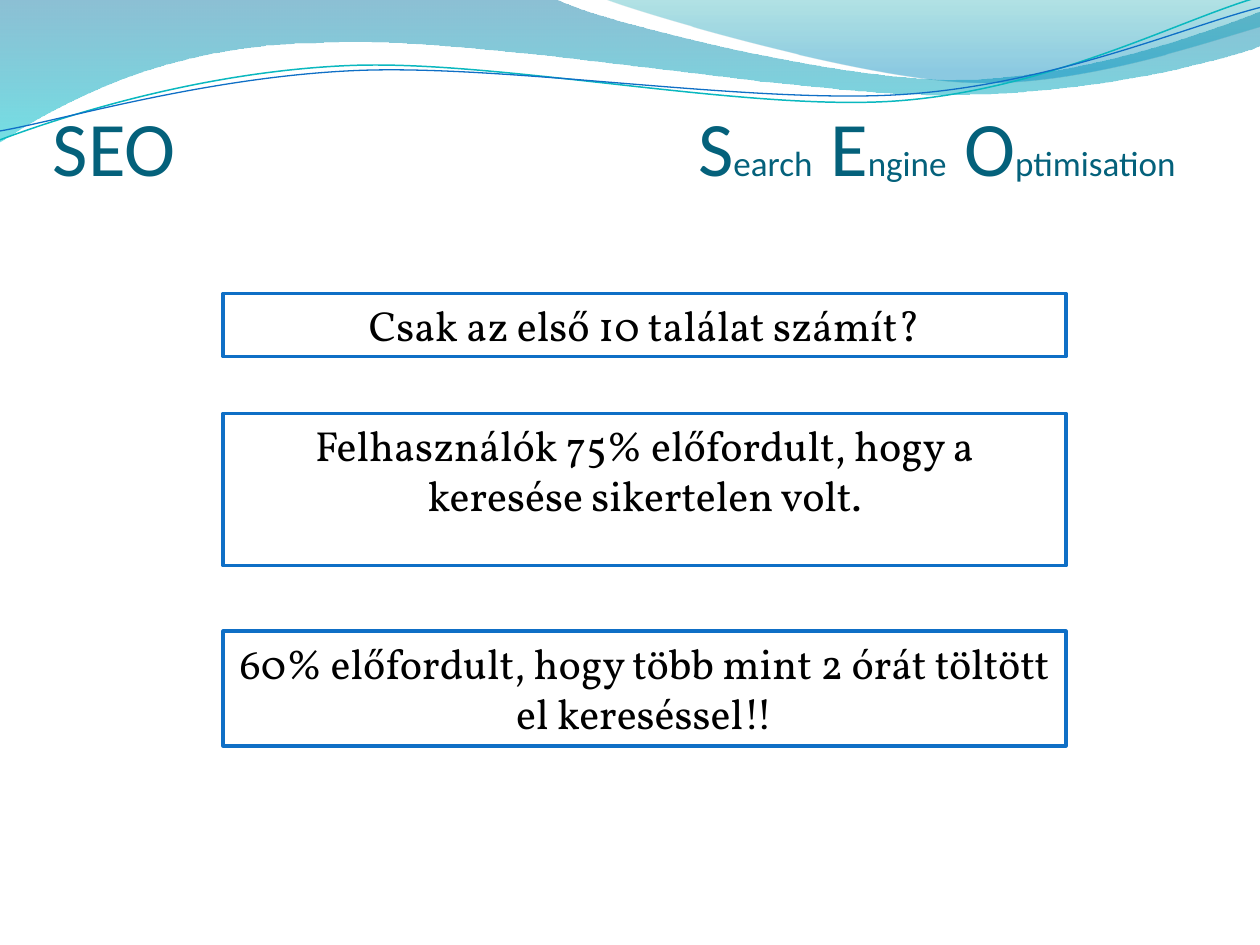
import math

from lxml import etree
from pptx import Presentation
from pptx import util as u
from pptx.dml.color import RGBColor
from pptx.enum import shapes, text
from pptx.oxml.ns import qn

COLORS = {"title": "04617B", "blue": "0F6FC6", "teal": "0AB8BF",
          "white": "FFFFFF", "black": "000000"}

# Content: title spans (text, size) and boxes (text, top, height), back to front
TITLE = [("SEO\tS", 44), ("earch", 20), (" E", 44), ("ngine", 20),
         (" O", 44), ("ptimisation", 20)]
BOXES = [
    ("Csak az első 10 találat számít?", 2.33, 0.5),
    ("60% előfordult, hogy több mint 2 órát töltött el kereséssel!!", 5.01, 0.91),
    ("Felhasználók 75% előfordult, hogy a keresése sikertelen volt.", 3.28, 1.21),
]
BOX_LEFT, BOX_WIDTH = 1.77, 6.69
TAB_STOP = 5.12

# Outlines: a segment of one point is a line, of three points a Bezier curve
# Gradient stops: position, colour, opacity in percent
WAVES = [
    ([[(0, -0.01)], [(4.4, -0.01)],
      [(4.76, 0.17), (6.64, 0.63), (7.58, 0.63)],
      [(8.53, 0.63), (9.58, 0.26), (10, 0.09)], [(10.01, 0.36)],
      [(9.83, 0.44), (8.7, 0.76), (7.46, 0.75)],
      [(6.22, 0.75), (3.82, 0.28), (2.57, 0.34)],
      [(1.29, 0.35), (0.46, 0.83), (-0.01, 1.13)], [(0, -0.01)]],
     [(0, "0074A1", 45), (1, "00C6CF", 55)]),
    ([[(4.79, -0.01)],
      [(5.09, 0.11), (6.82, 0.62), (7.69, 0.65)],
      [(8.56, 0.69), (9.61, 0.32), (10, 0.21)], [(10, 0)], [(4.79, -0.01)]],
     [(0, "00A1A9", 30), (0.8, "008BBF", 45)]),
]
# Strands: outline as it lies on the slide, centre of its frame, colour, width
STRANDS = [
    ([[(0, 1.11)],
      [(0.48, 0.93), (1.58, 0.57), (2.77, 0.52)],
      [(3.95, 0.47), (5.93, 0.89), (7.13, 0.8)],
      [(8.33, 0.71), (9.38, 0.15), (9.98, -0.02)]], (4.99, 0.58), "teal", 0.85),
    ([[(0, 1.04)],
      [(0.47, 0.96), (1.64, 0.61), (2.83, 0.56)],
      [(4.03, 0.51), (5.97, 0.83), (7.17, 0.75)],
      [(8.36, 0.67), (9.41, 0.21), (10, 0.06)]], (5, 0.59), "blue", 0.75),
]
STRAND_TILT = 357.3


def rgb(name):
    return RGBColor.from_string(COLORS[name])


def turn(point, centre, degrees):
    angle = math.radians(degrees)
    x, y = point[0] - centre[0], point[1] - centre[1]
    return (centre[0] + x * math.cos(angle) - y * math.sin(angle),
            centre[1] + x * math.sin(angle) + y * math.cos(angle))


def add_outline(slide, segments, close):
    points = [(u.Inches(x), u.Inches(y)) for part in segments for x, y in part]
    builder = slide.shapes.build_freeform(*points[0])
    builder.add_line_segments(points[1:], close=close)
    shape = builder.convert_to_shape()
    shape.shadow.inherit = False
    # Join the three points of each curve into one Bezier command
    lines = iter(list(shape.element.spPr.iter(qn("a:lnTo"))))
    for part in segments[1:]:
        commands = [next(lines) for _ in part]
        if len(part) == 3:
            curve = etree.Element(qn("a:cubicBezTo"))
            commands[0].addprevious(curve)
            for command in commands:
                curve.append(command[0])
                command.getparent().remove(command)
    return shape


def add_wave(slide, segments, stops):
    wave = add_outline(slide, segments, True)
    wave.line.fill.background()
    wave.fill.gradient()
    wave.fill.gradient_angle = 270
    for stop, (position, color, _) in zip(wave.fill.gradient_stops, stops):
        stop.position = position
        stop.color.rgb = RGBColor.from_string(color)
    tags = list(wave.element.spPr.iter(qn("a:srgbClr")))
    for tag, (_, _, opacity) in zip(tags, stops):
        etree.SubElement(tag, qn("a:alpha"), val=str(opacity * 1000))


def add_strand(slide, segments, centre, color, width):
    level = [[turn(point, centre, -STRAND_TILT) for point in part]
             for part in segments]
    strand = add_outline(slide, level, False)
    strand.rotation = STRAND_TILT
    strand.fill.background()
    strand.line.color.rgb = rgb(color)
    strand.line.width = u.Pt(width)


def fill_title(title):
    title.left, title.top = u.Inches(0.42), u.Inches(0.25)
    title.width, title.height = u.Inches(9.17), u.Inches(1.27)
    frame = title.text_frame
    frame.auto_size = text.MSO_AUTO_SIZE.NONE
    frame.vertical_anchor = text.MSO_ANCHOR.BOTTOM
    frame.margin_left = frame.margin_right = frame.margin_bottom = 0
    frame.margin_top = u.Inches(0.05)
    para = frame.paragraphs[0]
    para.alignment = text.PP_ALIGN.LEFT
    para.font.name = "Calibri"
    para.font.color.rgb = rgb("title")
    for words, size in TITLE:
        span = para.add_run()
        span.text = words
        span.font.size = u.Pt(size)
    # The tab stop sets the full name apart from the abbreviation
    properties = para._p.get_or_add_pPr()
    tabs = etree.Element(qn("a:tabLst"))
    etree.SubElement(tabs, qn("a:tab"), pos=str(u.Inches(TAB_STOP)), algn="l")
    properties.find(qn("a:defRPr")).addprevious(tabs)


def add_box(slide, words, top, height):
    box = slide.shapes.add_shape(
        shapes.MSO_SHAPE.RECTANGLE, u.Inches(BOX_LEFT), u.Inches(top),
        u.Inches(BOX_WIDTH), u.Inches(height))
    box.shadow.inherit = False
    box.fill.solid()
    box.fill.fore_color.rgb = rgb("white")
    box.line.color.rgb = rgb("blue")
    box.line.width = u.Pt(2)
    frame = box.text_frame
    frame.word_wrap = True
    frame.auto_size = text.MSO_AUTO_SIZE.SHAPE_TO_FIT_TEXT
    frame.vertical_anchor = text.MSO_ANCHOR.TOP
    para = frame.paragraphs[0]
    para.text = words
    para.alignment = text.PP_ALIGN.CENTER
    para.font.name = "Vollkorn"
    para.font.size = u.Pt(24)
    para.font.color.rgb = rgb("black")


def main():
    deck = Presentation()
    deck.slide_width, deck.slide_height = u.Inches(10), u.Inches(7.5)
    slide = deck.slides.add_slide(deck.slide_layouts[5])
    # Decoration along the top edge
    for wave in WAVES:
        add_wave(slide, *wave)
    for strand in STRANDS:
        add_strand(slide, *strand)
    # Title and statements
    fill_title(slide.shapes.title)
    for box in BOXES:
        add_box(slide, *box)
    deck.save("out.pptx")


if __name__ == "__main__":
    main()
